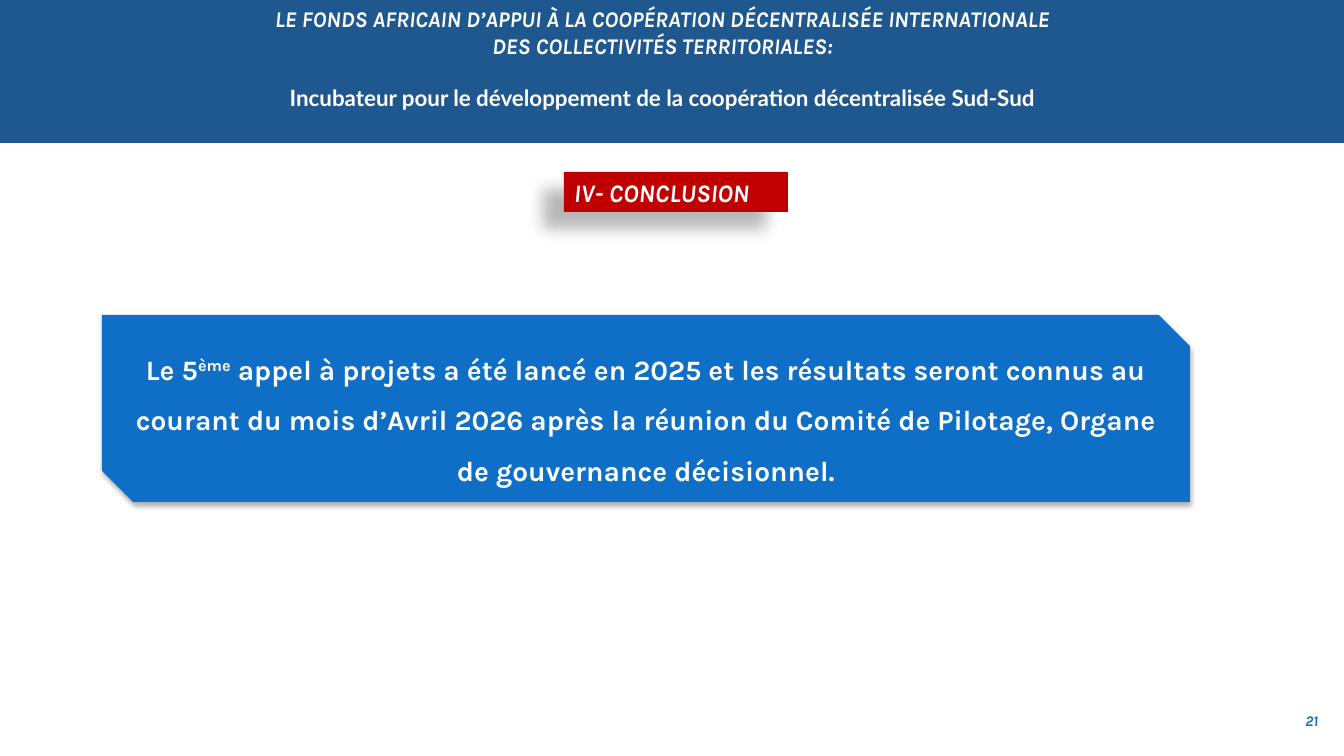
from lxml import etree
from pptx import Presentation
from pptx.dml.color import RGBColor
from pptx.enum.shapes import MSO_SHAPE
from pptx.enum.text import MSO_ANCHOR, PP_ALIGN
from pptx.oxml.ns import qn
from pptx.util import Emu, Pt

BAND = MSO_SHAPE.RECTANGLE
SNIPPED = MSO_SHAPE.SNIP_2_DIAG_RECTANGLE
TOP, MIDDLE = MSO_ANCHOR.TOP, MSO_ANCHOR.MIDDLE
LEFT, CENTER, RIGHT = PP_ALIGN.LEFT, PP_ALIGN.CENTER, PP_ALIGN.RIGHT
EMU_PER_PX = 914400 / 100.8
NAVY, BLUE, RED, WHITE, BLACK = "1F588E", "0F6FC6", "C00000", "FFFFFF", "000000"


def px(length):
    """Turn pixels into EMU."""
    return Emu(round(length * EMU_PER_PX))


def color(hex_text):
    """Turn a hex string into a colour."""
    return RGBColor.from_string(hex_text)


def add_block(page, kind, bounds, fill):
    """Add a filled shape without outline or shadow."""
    block = page.shapes.add_shape(kind, *map(px, bounds))
    block.shadow.inherit = False
    block.fill.solid()
    block.fill.fore_color.rgb = color(fill)
    block.line.fill.background()
    return block


def add_shadow(block, alpha, blur, distance, angle):
    """Give a shape an outer shadow, in percent, points and degrees."""
    effects = block._element.spPr.find(qn("a:effectLst"))
    shadow = etree.SubElement(
        effects, qn("a:outerShdw"), blurRad=str(Pt(blur)), dist=str(Pt(distance)),
        dir=str(angle * 60000), algn="ctr", rotWithShape="0")
    tint = etree.SubElement(shadow, qn("a:srgbClr"), val=BLACK)
    etree.SubElement(tint, qn("a:alpha"), val=str(alpha * 1000))


def set_frame(box, anchor, inset_x=10, inset_y=5):
    """Set wrapping, anchor and insets, and return the first paragraph."""
    frame = box.text_frame
    frame.word_wrap = True
    frame.vertical_anchor = anchor
    frame.margin_left = frame.margin_right = px(inset_x)
    frame.margin_top = frame.margin_bottom = px(inset_y)
    return frame.paragraphs[0]


def style(para, size, align, fill=WHITE, italic=True, font="Karla"):
    """Set the alignment and bold font of a paragraph."""
    para.alignment = align
    para.font.size = Pt(size)
    para.font.name = font
    para.font.bold = True
    para.font.italic = italic
    para.font.color.rgb = color(fill)


def add_header(page):
    """Add the top band with the fund's name and its subtitle."""
    add_block(page, BAND, (0, 0, 1344, 143), NAVY)
    box = page.shapes.add_textbox(*map(px, (135, 5, 1055, 119)))
    name = set_frame(box, TOP, inset_y=0)
    name.text = ("LE FONDS AFRICAIN D’APPUI À LA COOPÉRATION DÉCENTRALISÉE "
                 "INTERNATIONALE\vDES COLLECTIVITÉS TERRITORIALES:")
    style(name, 16, CENTER)
    subtitle = box.text_frame.add_paragraph()
    subtitle.text = ("Incubateur pour le développement de la coopération "
                     "décentralisée Sud-Sud")
    subtitle.space_before = Pt(18)
    style(subtitle, 16, CENTER, italic=False, font="Lato")


def add_section_label(page):
    """Add the red section label."""
    label = add_block(page, BAND, (564, 172, 224, 40), RED)
    add_shadow(label, 28, 11.8, 19.7, 141)
    para = set_frame(label, TOP)
    para.text = "IV- CONCLUSION"
    style(para, 18, LEFT)


def add_conclusion(page):
    """Add the blue panel with the closing statement."""
    panel = add_block(page, SNIPPED, (102, 315, 1088, 187), BLUE)
    add_shadow(panel, 32, 3.5, 2.2, 90)
    para = set_frame(panel, TOP)
    para.line_spacing = 1.5
    style(para, 20, CENTER, italic=False)
    para.add_run().text = "Le 5"
    ordinal = para.add_run()
    ordinal.text = "ème"
    ordinal._r.get_or_add_rPr().set("baseline", "30000")
    para.add_run().text = (
        " appel à projets a été lancé en 2025 et les résultats seront connus au "
        "courant du mois d’Avril 2026 après la réunion du Comité de Pilotage, "
        "Organe de gouvernance décisionnel.")


def add_page_number(page):
    """Add the page number in the lower right corner."""
    box = page.shapes.add_textbox(*map(px, (1267, 701, 61, 40)))
    para = set_frame(box, MIDDLE)
    para.text = "21"
    style(para, 10.5, RIGHT, fill=BLUE)


def main():
    """Build and save the deck."""
    deck = Presentation()
    deck.slide_width, deck.slide_height = px(1344), px(756)
    page = deck.slides.add_slide(deck.slide_layouts[6])
    add_header(page)
    add_page_number(page)
    add_section_label(page)
    add_conclusion(page)
    deck.save("out.pptx")


if __name__ == "__main__":
    main()
